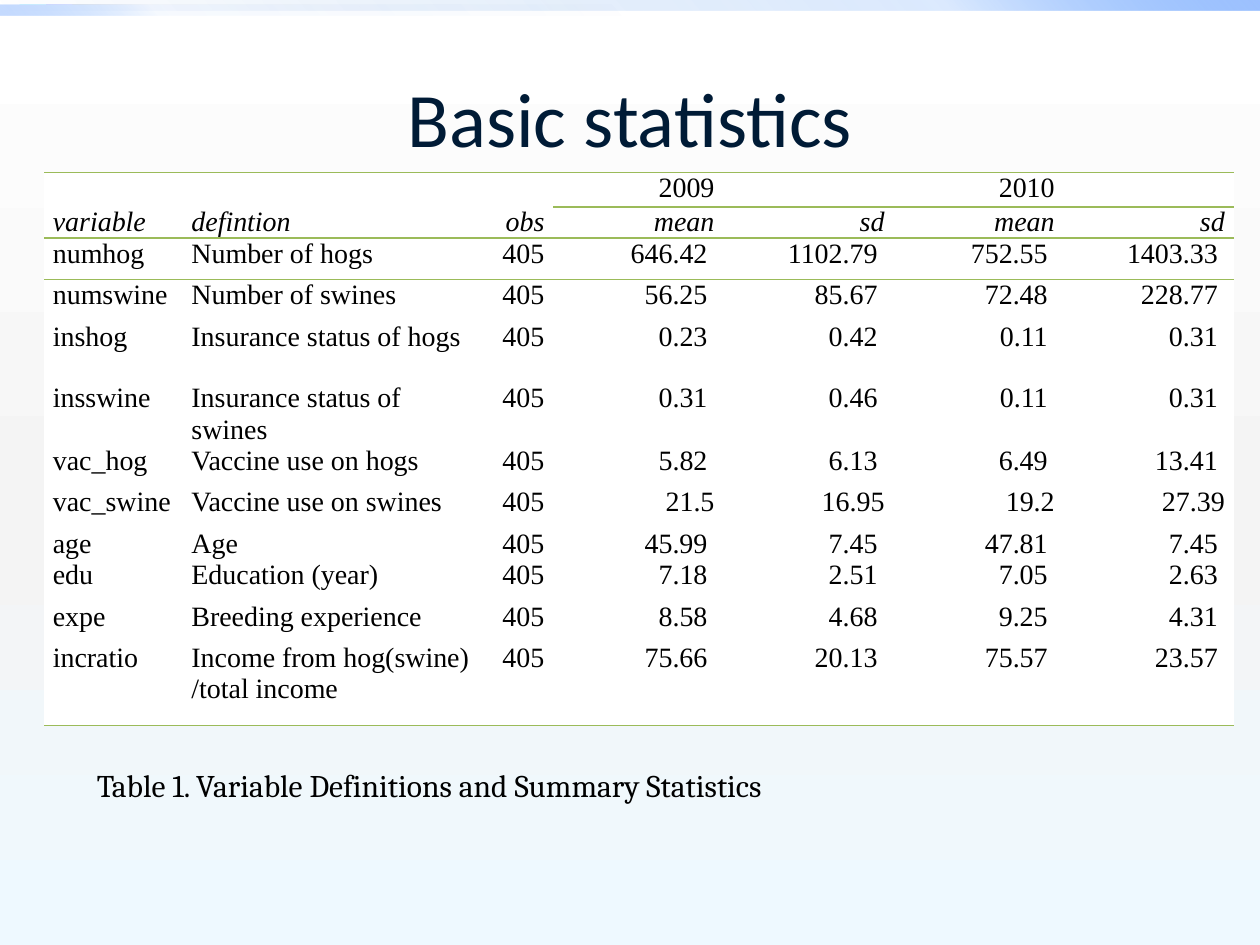
from lxml import etree
from pptx import Presentation
from pptx.dml.color import RGBColor
from pptx.enum.shapes import MSO_SHAPE
from pptx.enum.text import MSO_ANCHOR, MSO_AUTO_SIZE, PP_ALIGN
from pptx.oxml.ns import qn
from pptx.util import Inches, Pt

RECT = MSO_SHAPE.RECTANGLE
MIDDLE = MSO_ANCHOR.MIDDLE
FIT_SHAPE = MSO_AUTO_SIZE.SHAPE_TO_FIT_TEXT
LEFT, CENTER, RIGHT, JUSTIFY = (
    PP_ALIGN.LEFT, PP_ALIGN.CENTER, PP_ALIGN.RIGHT, PP_ALIGN.JUSTIFY)

WIDTH, HEIGHT = 10, 7.5
NO_GRID_STYLE = "{2D5ABB26-0587-4C30-8999-92F81FD0307C}"
RULE_COLOR = "9BBB59"

COLUMNS = [1.1, 2.36, 0.58] + [1.35] * 4
ROWS = [0.17, 0.17, 0.33, 0.33, 0.49, 0.49, 0.33, 0.33, 0.17, 0.33, 0.33, 0.66]
ALIGNMENTS = [JUSTIFY, LEFT] + [RIGHT] * 5
FIRST_YEAR_COLUMN = 3
STATISTICS = [
    ("", "", "", "2009", "", "2010", ""),
    ("variable", "defintion", "obs", "mean", "sd", "mean", "sd"),
    ("numhog", "Number of hogs", "405", "646.42 ", "1102.79 ", "752.55 ", "1403.33 "),
    ("numswine", "Number of swines", "405", "56.25 ", "85.67 ", "72.48 ", "228.77 "),
    ("inshog", "Insurance status of hogs", "405", "0.23 ", "0.42 ", "0.11 ", "0.31 "),
    ("insswine", "Insurance status of swines", "405", "0.31 ", "0.46 ", "0.11 ", "0.31 "),
    ("vac_hog", "Vaccine use on hogs", "405", "5.82 ", "6.13 ", "6.49 ", "13.41 "),
    ("vac_swine", "Vaccine use on swines", "405", "21.5", "16.95", "19.2", "27.39"),
    ("age", "Age", "405", "45.99 ", "7.45 ", "47.81 ", "7.45 "),
    ("edu", "Education (year)", "405", "7.18 ", "2.51 ", "7.05 ", "2.63 "),
    ("expe", "Breeding experience", "405", "8.58 ", "4.68 ", "9.25 ", "4.31 "),
    ("incratio", "Income from hog(swine)\n/total income", "405",
     "75.66 ", "20.13 ", "75.57 ", "23.57 "),
]


def rgb(color):
    return RGBColor.from_string(color)


def place(shape, left, top, width, height):
    shape.left, shape.top = Inches(left), Inches(top)
    shape.width, shape.height = Inches(width), Inches(height)


def format_text(tf, font, size, color, align, italic=False):
    for p in tf.paragraphs:
        p.alignment = align
        for r in p.runs:
            r.font.name, r.font.size, r.font.italic = font, Pt(size), italic
            r.font.color.rgb = rgb(color)


def set_gradient(fill, owner, stops, angle):
    """Swap the owner's solid fill for stops of (position, colour, opacity)."""
    fill.solid()
    solid = owner.find(qn("a:solidFill"))
    grad = etree.Element(qn("a:gradFill"), rotWithShape="1")
    stop_list = etree.SubElement(grad, qn("a:gsLst"))
    for position, color, opacity in stops:
        stop = etree.SubElement(stop_list, qn("a:gs"), pos=str(position * 1000))
        clr = etree.SubElement(stop, qn("a:srgbClr"), val=color)
        if opacity < 100:
            etree.SubElement(clr, qn("a:alpha"), val=str(opacity * 1000))
    etree.SubElement(grad, qn("a:lin"), ang=str(angle * 60000), scaled="0")
    owner.replace(solid, grad)


def add_background(s):
    fill = s.background.fill
    fill.solid()
    owner = s.element.find(".//" + qn("p:bgPr"))
    stops = [(0, "FFFFFF", 100), (55, "F4F4F4", 100), (100, "EEF9FF", 100)]
    set_gradient(fill, owner, stops, 90)


def add_bar(s, top, width, opacities, angle):
    bar = s.shapes.add_shape(RECT, 0, Inches(top), Inches(width), Inches(0.08))
    bar.shadow.inherit = False
    bar.line.fill.background()
    stops = list(zip((0, 75, 100), ("0058B7", "4F95FF", "9EC2FF"), opacities))
    set_gradient(bar.fill, bar.element.spPr, stops, angle)


def add_title(s, text):
    title = s.shapes.title
    place(title, 0.5, 0.3, WIDTH - 1, 1.25)
    tf = title.text_frame
    tf.text = text
    tf.vertical_anchor = MIDDLE
    format_text(tf, "Calibri", 44, "001B36", CENTER)


def set_border(cell, side):
    ln = etree.SubElement(cell._tc.get_or_add_tcPr(), qn("a:" + side), w=str(Pt(1)))
    solid = etree.SubElement(ln, qn("a:solidFill"))
    etree.SubElement(solid, qn("a:srgbClr"), val=RULE_COLOR)


def fill_cell(cell, row, col, text):
    under_years = col >= FIRST_YEAR_COLUMN
    if row in (0, 2) or (row == 1 and under_years):
        set_border(cell, "lnT")
    if row in (1, len(ROWS) - 1) or (row == 0 and under_years):
        set_border(cell, "lnB")
    cell.fill.solid()
    cell.fill.fore_color.rgb = rgb("FFFFFF")
    cell.margin_left = cell.margin_right = Inches(0.07)
    cell.margin_top = cell.margin_bottom = 0
    tf = cell.text_frame
    tf.text = text
    format_text(tf, "Times New Roman", 16, "000000", ALIGNMENTS[col], row == 1)
    if not text:
        # Keeps empty cells from raising the header row
        etree.SubElement(tf.paragraphs[0]._p, qn("a:endParaRPr"), sz="1600")


def add_statistics(s):
    frame = s.shapes.add_table(len(ROWS), len(COLUMNS), Inches(0.35), Inches(1.37),
                               Inches(sum(COLUMNS)), Inches(sum(ROWS)))
    table = frame.table
    table.first_row = table.horz_banding = False
    table._tbl.tblPr.find(qn("a:tableStyleId")).text = NO_GRID_STYLE
    for column, width in zip(table.columns, COLUMNS):
        column.width = Inches(width)
    for i, (height, values) in enumerate(zip(ROWS, STATISTICS)):
        table.rows[i].height = Inches(height)
        for j, text in enumerate(values):
            fill_cell(table.cell(i, j), i, j, text)


def add_caption(s, text):
    box = s.shapes.add_textbox(Inches(0.67), Inches(6.03), Inches(7.64), Inches(0.4))
    tf = box.text_frame
    tf.word_wrap = True
    tf.auto_size = FIT_SHAPE
    tf.text = text
    format_text(tf, "Cambria", 18, "000000", LEFT)


def main():
    prs = Presentation()
    prs.slide_width, prs.slide_height = Inches(WIDTH), Inches(HEIGHT)
    s = prs.slides.add_slide(prs.slide_layouts[5])
    # Backdrop
    add_background(s)
    add_bar(s, 0, WIDTH, (0, 20, 100), 315)
    add_bar(s, 0.04, WIDTH / 2, (0, 5, 60), 135)
    # Content
    add_title(s, "Basic statistics")
    add_statistics(s)
    add_caption(s, "Table 1. Variable Definitions and Summary Statistics")
    prs.save("out.pptx")


if __name__ == "__main__":
    main()
